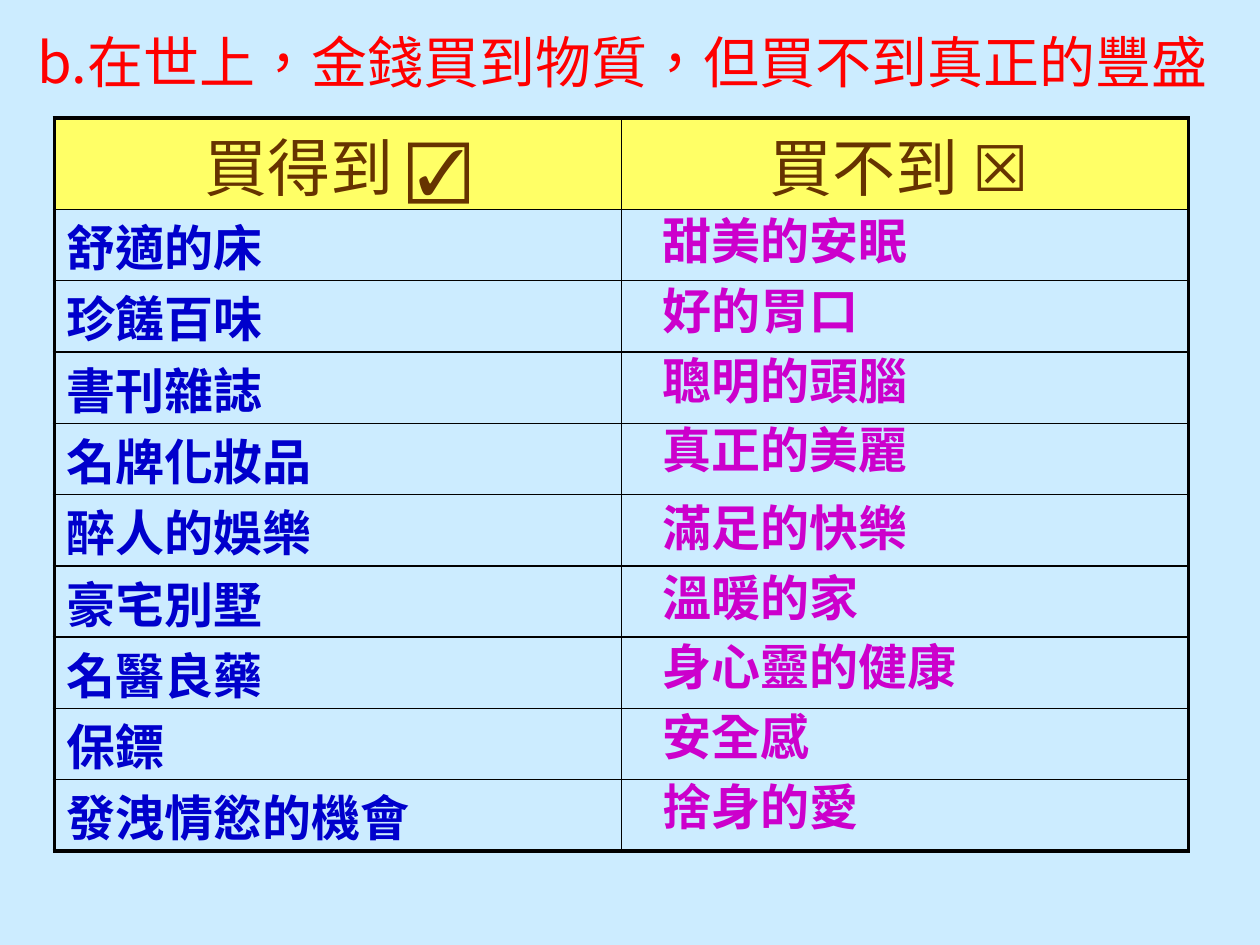
import pptx
import pptx.util
import pptx.dml.color
import pptx.enum.lang
import pptx.enum.shapes
import pptx.enum.text
import pptx.oxml
import pptx.oxml.ns

Pt = pptx.util.Pt
ALIGN = pptx.enum.text.PP_ALIGN
ANCHOR = pptx.enum.text.MSO_ANCHOR
CJK = "Noto Sans CJK SC"

HEADERS = ["買得到 ☑", "買不到 ☒"]
BUYABLE = ["舒適的床", "珍饈百味", "書刊雜誌", "名牌化妝品", "醉人的娛樂",
           "豪宅別墅", "名醫良藥", "保鏢", "發洩情慾的機會"]
PRICELESS = ["甜美的安眠", "好的胃口", "聰明的頭腦", "真正的美麗", "滿足的快樂",
             "溫暖的家", "身心靈的健康", "安全感", "捨身的愛"]


def color(value):
    return pptx.dml.color.RGBColor.from_string(value)


def write(tf, text, size, name, value, bold=False, align=ALIGN.LEFT):
    p = tf.paragraphs[0]
    p.text = text
    p.alignment = align
    p.font.size = Pt(size)
    p.font.name = name
    p.font.bold = bold
    p.font.color.rgb = color(value)
    p.font.language_id = pptx.enum.lang.MSO_LANGUAGE_ID.TRADITIONAL_CHINESE
    p.runs[0].font.language_id = p.font.language_id


def set_borders(cell, widths):
    """Draw black borders; widths are left, right, top, bottom in points."""
    tcPr = cell._tc.get_or_add_tcPr()
    for i, (side, width) in enumerate(zip("LRTB", widths)):
        ln = pptx.oxml.parse_xml(
            f'<a:ln{side} {pptx.oxml.ns.nsdecls("a")} w="{int(Pt(width))}">'
            '<a:solidFill><a:srgbClr val="000000"/></a:solidFill>'
            f'</a:ln{side}>')
        tcPr.insert(i, ln)


def add_backdrop(s, x, y, w, h):
    sp = s.shapes.add_shape(pptx.enum.shapes.MSO_SHAPE.RECTANGLE,
                            Pt(x), Pt(y), Pt(w), Pt(h))
    sp.shadow.inherit = False
    sp.fill.solid()
    sp.fill.fore_color.rgb = color("CCECFF")
    sp.line.fill.background()
    # Send behind the title placeholder
    s.shapes.title._element.addprevious(sp._element)


def add_title(s, x, y, w, h):
    sp = s.shapes.title
    sp.left, sp.top, sp.width, sp.height = Pt(x), Pt(y), Pt(w), Pt(h)
    tf = sp.text_frame
    tf.auto_size = pptx.enum.text.MSO_AUTO_SIZE.NONE
    tf.vertical_anchor = ANCHOR.MIDDLE
    write(tf, "b.在世上，金錢買到物質，但買不到真正的豐盛", 32, CJK, "FF0000")


def add_comparison_table(s, x, y, w, header_h, row_h):
    rows = len(BUYABLE) + 1
    height = header_h + row_h * len(BUYABLE)
    table = s.shapes.add_table(rows, 2, Pt(x), Pt(y), Pt(w), Pt(height)).table
    table.horz_banding = False
    for column in table.columns:
        column.width = Pt(w / 2)
    for r, row in enumerate(table.rows):
        row.height = Pt(header_h if r == 0 else row_h)
        for c, cell in enumerate(row.cells):
            cell.margin_top = cell.margin_bottom = 0
            cell.vertical_anchor = ANCHOR.BOTTOM
            if r == 0:
                cell.margin_right = Pt(14 if c else 7.2)
                cell.fill.solid()
                cell.fill.fore_color.rgb = color("FFFF66")
                write(cell.text_frame, HEADERS[c], 36, CJK, "663300",
                      align=ALIGN.CENTER)
            else:
                cell.fill.background()
                if c == 0:
                    write(cell.text_frame, BUYABLE[r - 1], 28, "Arial",
                          "0000CC", bold=True)
            # Heavy outline, thin inner rules
            outer = (c == 0, c == 1, r == 0, r == rows - 1)
            set_borders(cell, [2.25 if edge else 1 for edge in outer])


def add_priceless_items(s, x, y, w, h, pitch):
    for i, text in enumerate(PRICELESS):
        # The last five items sit slightly lower
        top = y + i * pitch + (4.5 if i >= 4 else 0)
        tf = s.shapes.add_textbox(Pt(x), Pt(top), Pt(w), Pt(h)).text_frame
        tf.word_wrap = True
        write(tf, text, 28, "Arial", "CC00CC", bold=True)


def main():
    prs = pptx.Presentation()
    prs.slide_width, prs.slide_height = Pt(720), Pt(540)
    s = prs.slides.add_slide(prs.slide_layouts[5])

    add_backdrop(s, 0, 0, 720, 540)
    add_title(s, 14.4, 15, 705.6, 40)
    add_comparison_table(s, 31, 67.5, 648, 52.2, 40.75)
    add_priceless_items(s, 371.5, 117, 183, 41, 39.8)

    prs.save("out.pptx")


if __name__ == "__main__":
    main()
